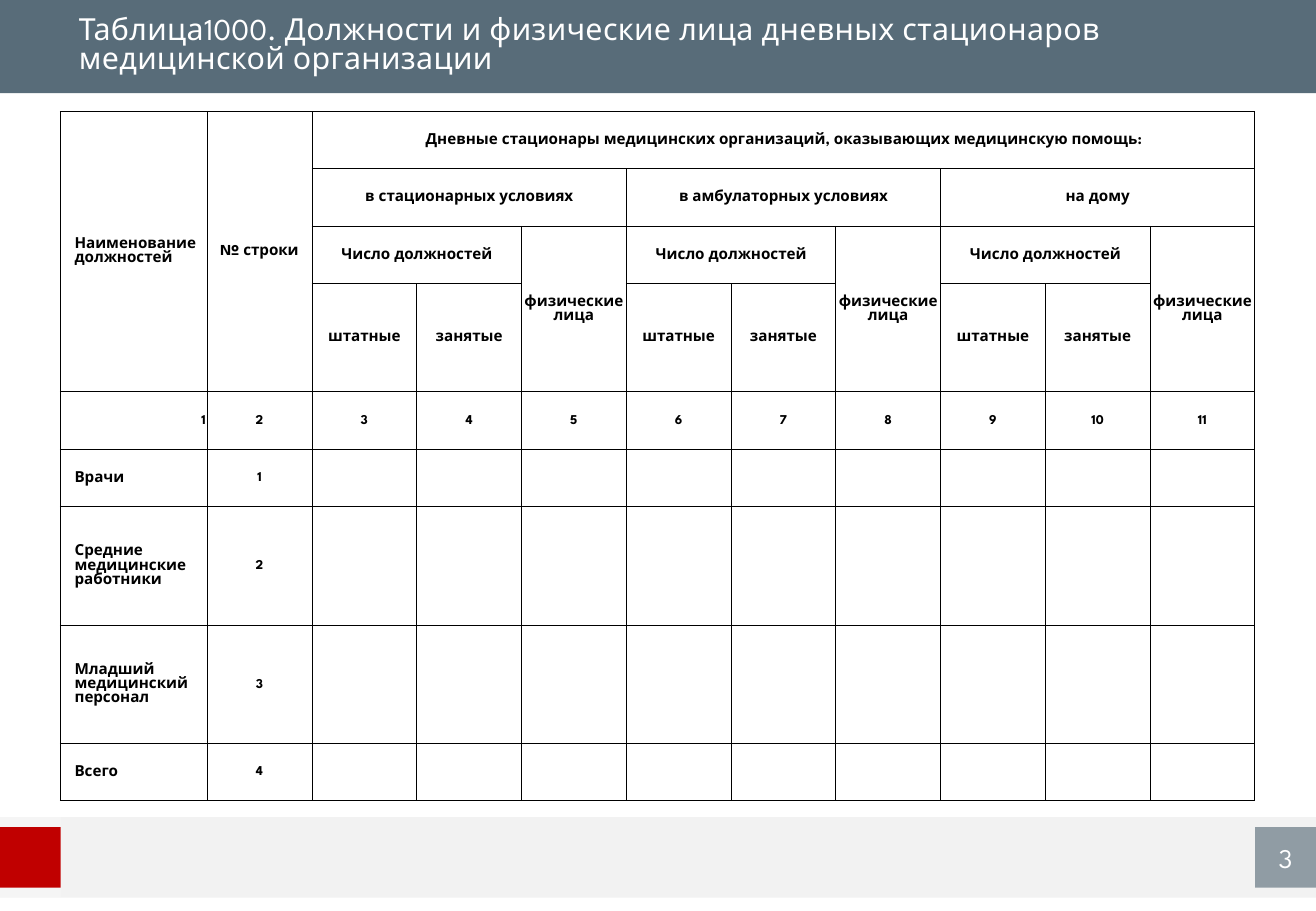
from copy import deepcopy

from lxml.etree import SubElement
from pptx import Presentation
from pptx.dml.color import RGBColor
from pptx.enum.shapes import MSO_SHAPE
from pptx.enum.text import MSO_ANCHOR, PP_ALIGN
from pptx.oxml import parse_xml
from pptx.oxml.ns import nsdecls, qn
from pptx.util import Cm, Pt

FONT = "League Spartan"
BLACK = RGBColor(0x00, 0x00, 0x00)
WHITE = RGBColor(0xFF, 0xFF, 0xFF)
SLATE = RGBColor(0x2F, 0x48, 0x58)
RED = RGBColor(0xC0, 0x00, 0x00)
PALE_GREY = RGBColor(0xF2, 0xF2, 0xF2)

SLIDE_W, SLIDE_H = Cm(27.51), Cm(19.05)
MARGIN = Cm(1.27)

TITLE = "Таблица1000. Должности и физические лица дневных стационаров медицинской организации"
HEADING = "Дневные стационары медицинских организаций, оказывающих медицинскую помощь:"
CONDITIONS = ["в стационарных условиях", "в амбулаторных условиях", "на дому"]
STAFF = [
    "Врачи",
    "Средние\nмедицинские\nработники",
    "Младший\nмедицинский\nперсонал",
    "Всего",
]
COLUMN_WIDTHS = [Cm(3.07)] + [Cm(2.19)] * 10
ROW_HEIGHTS = [Cm(h) for h in (1.2, 1.2, 1.2, 2.26, 1.2, 1.2, 2.48, 2.47, 1.2)]
NUMBER_ROW = 4


def write(frame, text, size, color=BLACK, bold=False, align=PP_ALIGN.LEFT,
          line_spacing=None, tracking=None):
    paragraph = frame.paragraphs[0]
    paragraph.text = text
    paragraph.alignment = align
    paragraph.line_spacing = line_spacing
    for run in paragraph.runs:
        run.font.name = FONT
        run.font.size = Pt(size)
        run.font.bold = bold
        run.font.color.rgb = color
        properties = run._r.get_or_add_rPr()
        if tracking:
            properties.set("spc", str(tracking))
    for line_break in paragraph._p.findall(qn("a:br")):
        line_break.append(deepcopy(properties))


def add_block(slide, left, top, width, height, color, opacity=100):
    block = slide.shapes.add_shape(MSO_SHAPE.RECTANGLE, left, top, width, height)
    block.shadow.inherit = False
    block.line.fill.background()
    block.fill.solid()
    block.fill.fore_color.rgb = color
    if opacity < 100:
        color_element = block._element.spPr.find(qn("a:solidFill"))[0]
        SubElement(color_element, qn("a:alpha")).set("val", str(opacity * 1000))
    return block


def add_footer(slide, left, top, width, height, number):
    add_block(slide, left, top, width, height, PALE_GREY)
    add_block(slide, left, top, MARGIN, height, WHITE, opacity=30)
    square_top = top + (height - MARGIN) // 2
    add_block(slide, left, square_top, MARGIN, MARGIN, RED)
    badge = add_block(slide, left + width - MARGIN, square_top, MARGIN, MARGIN,
                      SLATE, opacity=50)
    frame = badge.text_frame
    frame.vertical_anchor = MSO_ANCHOR.MIDDLE
    write(frame, number, 16, color=WHITE, align=PP_ALIGN.CENTER)


def add_title(slide, left, top, width, height):
    add_block(slide, left, top, width, height, SLATE, opacity=80)
    indent = Cm(1.65)
    frame = slide.shapes.add_textbox(left + indent, top, width - 2 * indent, height).text_frame
    frame.word_wrap = True
    frame.vertical_anchor = MSO_ANCHOR.MIDDLE
    frame.margin_left = frame.margin_right = frame.margin_top = frame.margin_bottom = 0
    write(frame, TITLE, 18, color=WHITE, line_spacing=Pt(17.2), tracking=20)


def style_cell(cell):
    """Clear the fill and draw thin black borders."""
    cell.fill.background()
    properties = cell._tc.get_or_add_tcPr()
    for index, side in enumerate(("lnL", "lnR", "lnT", "lnB")):
        properties.insert(index, parse_xml(
            f'<a:{side} {nsdecls("a")} w="{Pt(0.5)}"><a:solidFill>'
            f'<a:srgbClr val="{BLACK}"/></a:solidFill></a:{side}>'))


def fill_cell(table, row, column, text, rows=1, columns=1, size=9, align=PP_ALIGN.CENTER):
    cell = table.cell(row, column)
    if rows * columns > 1:
        cell.merge(table.cell(row + rows - 1, column + columns - 1))
    cell.vertical_anchor = MSO_ANCHOR.MIDDLE
    cell.margin_left = Cm(0.3) if column == 0 else Cm(0.03)
    cell.margin_right = cell.margin_top = Cm(0.03)
    cell.margin_bottom = 0
    write(cell.text_frame, text, size, bold=True, align=align)


def fill_header(table):
    fill_cell(table, 0, 0, "Наименование\nдолжностей", rows=4, align=PP_ALIGN.LEFT)
    fill_cell(table, 0, 1, "№ строки", rows=4)
    fill_cell(table, 0, 2, HEADING, columns=9)
    for index, condition in enumerate(CONDITIONS):
        first = 2 + 3 * index
        fill_cell(table, 1, first, condition, columns=3)
        fill_cell(table, 2, first, "Число должностей", columns=2)
        fill_cell(table, 2, first + 2, "физические\nлица", rows=2)
        fill_cell(table, 3, first, "штатные")
        fill_cell(table, 3, first + 1, "занятые")


def add_staff_table(slide, left, top):
    table = slide.shapes.add_table(
        len(ROW_HEIGHTS), len(COLUMN_WIDTHS), left, top,
        sum(COLUMN_WIDTHS), sum(ROW_HEIGHTS)).table
    table.first_row = table.horz_banding = False
    for column, width in zip(table.columns, COLUMN_WIDTHS):
        column.width = width
    for row, height in zip(table.rows, ROW_HEIGHTS):
        row.height = height
    for cell in table.iter_cells():
        style_cell(cell)

    fill_header(table)
    for column in range(len(COLUMN_WIDTHS)):
        align = PP_ALIGN.CENTER if column else PP_ALIGN.RIGHT
        fill_cell(table, NUMBER_ROW, column, str(column + 1), size=8, align=align)
    for number, staff in enumerate(STAFF, start=1):
        fill_cell(table, NUMBER_ROW + number, 0, staff, align=PP_ALIGN.LEFT)
        fill_cell(table, NUMBER_ROW + number, 1, str(number), size=8)


def main():
    presentation = Presentation()
    presentation.slide_width, presentation.slide_height = SLIDE_W, SLIDE_H
    slide = presentation.slides.add_slide(presentation.slide_layouts[6])
    add_footer(slide, 0, Cm(17.09), SLIDE_W, Cm(1.68), "3")
    add_title(slide, 0, 0, SLIDE_W, Cm(1.95))
    add_staff_table(slide, Cm(1.26), Cm(2.33))
    presentation.save("out.pptx")


if __name__ == "__main__":
    main()
